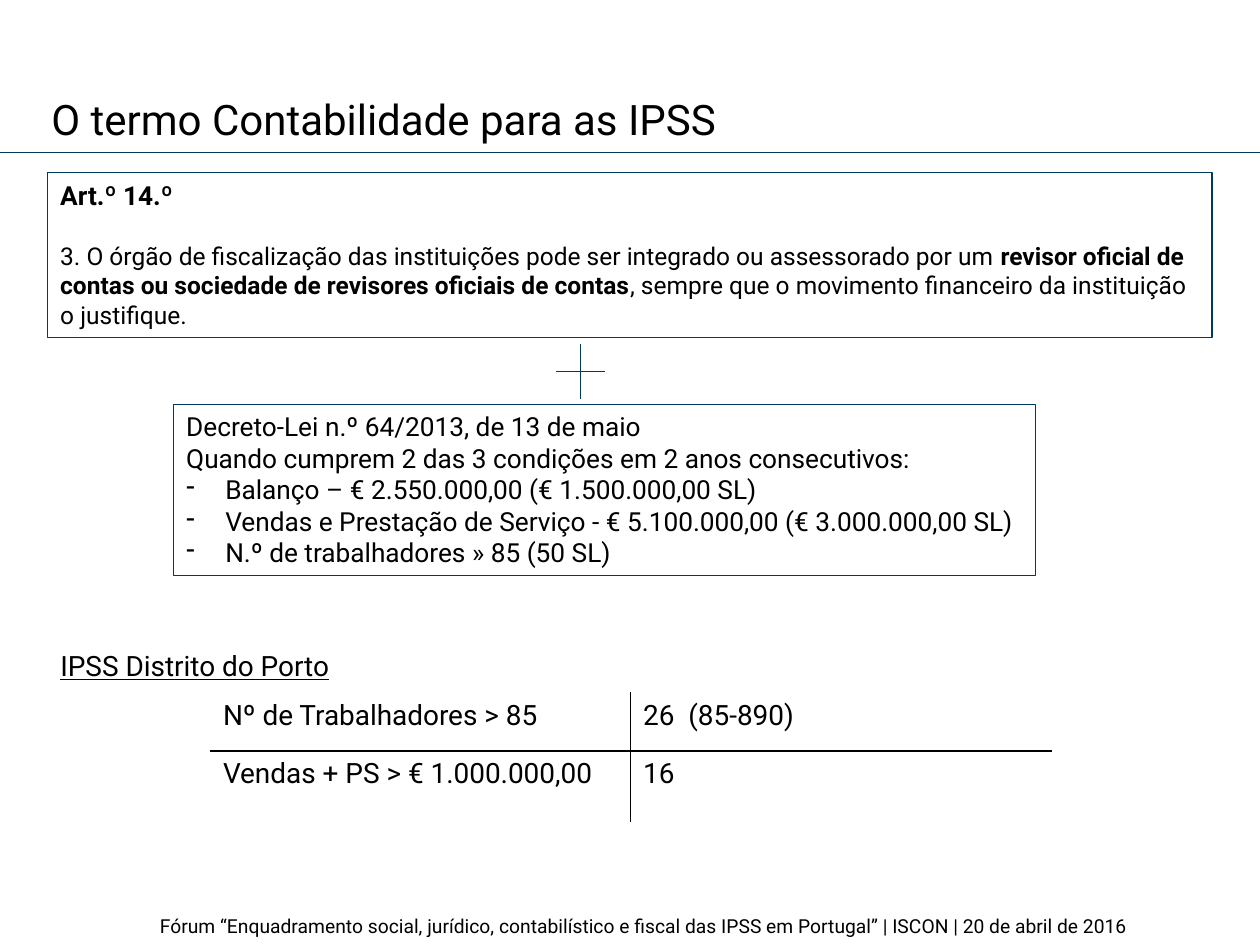
from lxml import etree
from pptx import Presentation
from pptx.dml.color import RGBColor
from pptx.enum.shapes import MSO_CONNECTOR, MSO_SHAPE
from pptx.enum.text import MSO_ANCHOR, PP_ALIGN
from pptx.oxml.ns import qn
from pptx.util import Inches, Pt

COLORS = {"navy": "003B5E", "black": "000000", "white": "FFFFFF"}
FONT = "Roboto"

# Content: a paragraph is a list of (text, size, style) runs
TITLE = [[("O termo Contabilidade para as IPSS", 24, "")]]
FOOTER = [[("Fórum “Enquadramento social, jurídico, contabilístico e fiscal das IPSS "
            "em Portugal” | ISCON | 20 de abril de 2016", 11, "")]]
ARTICLE = [
    [("Art.º 14.º", 15, "b")],
    [("3. O órgão de fiscalização das instituições pode ser integrado ou "
      "assessorado por um ", 14, ""),
     ("revisor oficial de contas ou sociedade de revisores oficiais de contas", 14, "b"),
     (", sempre que o movimento financeiro da instituição o justifique.", 14, "")],
]
DECREE = [[(text, 15, "")] for text in (
    "Decreto-Lei n.º 64/2013, de 13 de maio",
    "Quando cumprem 2 das 3 condições em 2 anos consecutivos:",
    "Balanço – € 2.550.000,00 (€ 1.500.000,00 SL)",
    "Vendas e Prestação de Serviço - € 5.100.000,00 (€ 3.000.000,00 SL)",
    "N.º de trabalhadores » 85 (50 SL)",
)]
DISTRICT = [[("IPSS Distrito do Porto", 16, "u")]]
TABLE = [("Nº de Trabalhadores > 85", "26  (85-890)"),
         ("Vendas + PS > € 1.000.000,00", "16")]
ROW_HEIGHTS = (0.46, 0.57)

# Horizontal rule under the title, then the two strokes of the plus sign
LINES = [(0, 1.21, 10, 1.21), (4.61, 2.73, 4.61, 3.17), (4.41, 2.95, 4.8, 2.95)]


def rgb(name):
    return RGBColor.from_string(COLORS[name])


def write(tf, paragraphs):
    for i, runs in enumerate(paragraphs):
        p = tf.paragraphs[0] if i == 0 else tf.add_paragraph()
        p.alignment = PP_ALIGN.LEFT
        for text, size, style in runs:
            r = p.add_run()
            r.text = text
            r.font.name, r.font.size = FONT, Pt(size)
            r.font.color.rgb = rgb("black")
            r.font.bold = "b" in style
            r.font.underline = "u" in style


def add_text(s, box, paragraphs, wrap=True):
    tf = s.shapes.add_textbox(*map(Inches, box)).text_frame
    tf.word_wrap = wrap
    write(tf, paragraphs)


def add_box(s, box, paragraphs):
    sp = s.shapes.add_shape(MSO_SHAPE.RECTANGLE, *map(Inches, box))
    sp.shadow.inherit = False
    sp.fill.background()
    sp.line.color.rgb = rgb("navy")
    sp.line.width = Pt(0.75)
    tf = sp.text_frame
    tf.word_wrap = True
    tf.vertical_anchor = MSO_ANCHOR.TOP
    write(tf, paragraphs)
    return tf


def add_line(s, ends):
    line = s.shapes.add_connector(MSO_CONNECTOR.STRAIGHT, *map(Inches, ends))
    line.line.color.rgb = rgb("navy")
    line.line.width = Pt(0.5)
    etree.SubElement(line._element.spPr, qn("a:effectLst"))


def add_bullet(p):
    pPr = p._p.get_or_add_pPr()
    pPr.set("marL", str(Inches(0.31)))
    pPr.set("indent", str(-Inches(0.31)))
    etree.SubElement(pPr, qn("a:buChar")).set("char", "-")


def set_borders(cell, sides):
    tcPr = cell._tc.get_or_add_tcPr()
    for i, (side, color) in enumerate(sides.items()):
        ln = etree.Element(qn(f"a:ln{side}"), w=str(Pt(1)))
        fill = etree.SubElement(ln, qn("a:solidFill"))
        etree.SubElement(fill, qn("a:srgbClr")).set("val", COLORS[color])
        tcPr.insert(i, ln)


def add_grid(s):
    table = s.shapes.add_table(2, 2, Inches(1.67), Inches(5.5), Inches(6.67),
                               Inches(sum(ROW_HEIGHTS))).table
    table.first_row = table.horz_banding = False
    for i, texts in enumerate(TABLE):
        table.rows[i].height = Inches(ROW_HEIGHTS[i])
        for j, text in enumerate(texts):
            cell = table.cell(i, j)
            cell.fill.solid()
            cell.fill.fore_color.rgb = rgb("white")
            write(cell.text_frame, [[(text, 16, "")]])
            # Only the inner edges are black
            inner = {"L": j == 1, "R": j == 0, "T": i == 1, "B": i == 0}
            set_borders(cell, {side: "black" if on else "white"
                               for side, on in inner.items()})


def main():
    prs = Presentation()
    prs.slide_width, prs.slide_height = Inches(10), Inches(7.5)
    s = prs.slides.add_slide(prs.slide_layouts[6])

    # Footer, title and lines
    add_text(s, (1.17, 7.21, 9.62, 0.29), FOOTER)
    add_text(s, (0.31, 0.69, 5.54, 0.5), TITLE, wrap=False)
    for ends in LINES:
        add_line(s, ends)

    # Legal texts
    article = add_box(s, (0.38, 1.37, 9.24, 1.31), ARTICLE)
    article.paragraphs[1].space_before = Pt(17.5)
    decree = add_box(s, (1.38, 3.21, 6.84, 1.36), DECREE)
    for p in decree.paragraphs[2:]:
        add_bullet(p)

    # District figures
    add_grid(s)
    add_text(s, (0.38, 5.1, 2.79, 0.37), DISTRICT)

    prs.save("out.pptx")


if __name__ == "__main__":
    main()
